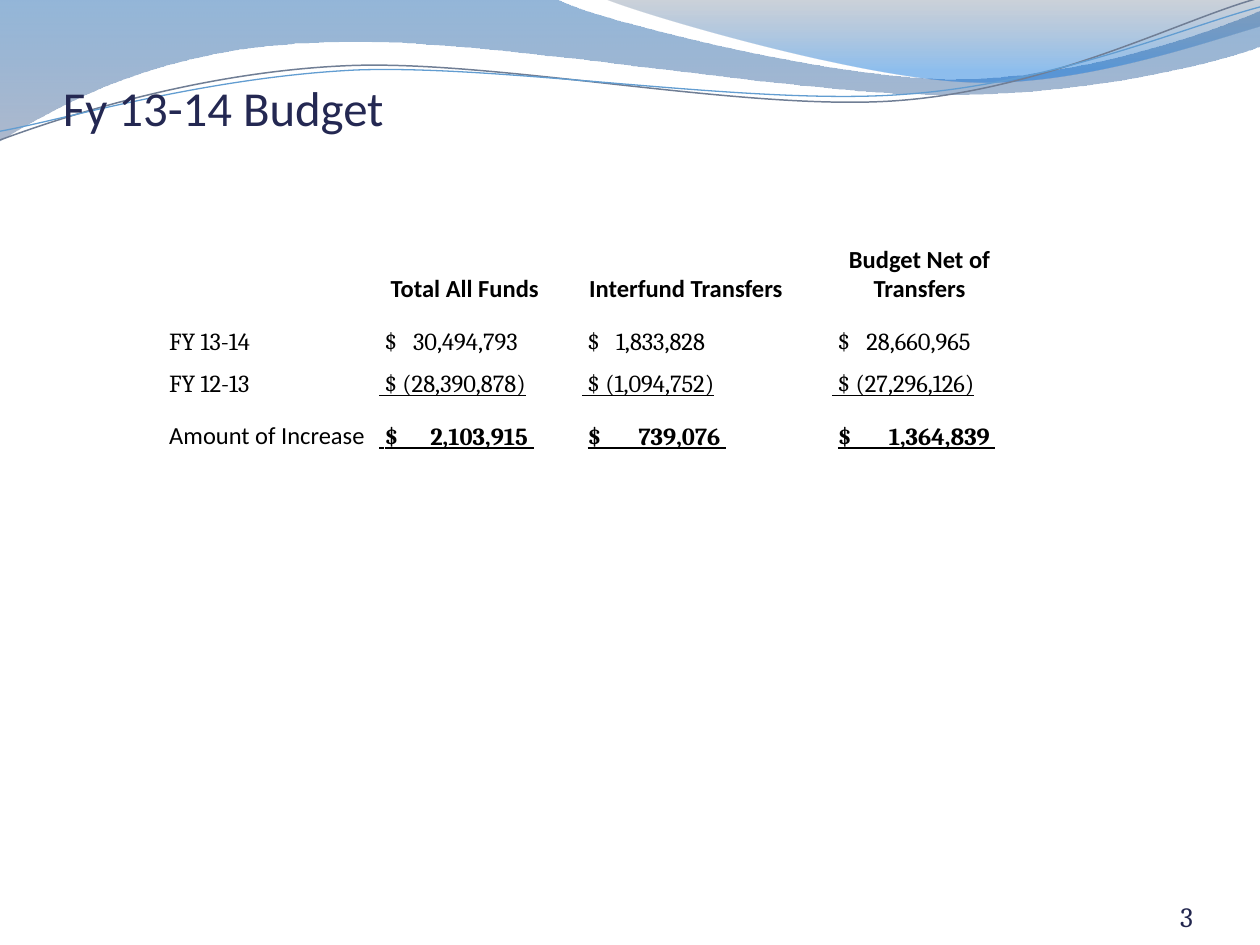
import math
from dataclasses import dataclass

from lxml import etree
from pptx import Presentation
from pptx.dml.color import RGBColor
from pptx.enum import text
from pptx.oxml import ns
from pptx.util import Pt


@dataclass(frozen=True)
class Theme:
    head: str = "Calibri"
    body: str = "Cambria"
    navy: str = "242852"
    dark: str = "22264E"
    ink: str = "000000"
    big: float = 27.9
    mid: int = 16
    small: int = 14
    wave: tuple = ((0, "125EAA", 45), (100, "697FA4", 55))
    crest: tuple = ((0, "596982", 30), (80, "0670DA", 45))
    grey: str = "707E95"
    blue: str = "629DD1"


T = Theme()
LEFT, MID = text.PP_ALIGN.LEFT, text.PP_ALIGN.CENTER
TILT = -2.7

WAVE = [(0, 0), (317, -1), (343, 12, 478, 45, 546, 45),
        (614, 45, 690, 19, 720, 6), (721, 26),
        (708, 32, 626, 55, 537, 54), (448, 54, 275, 20, 185, 24),
        (93, 26, 33, 60, -1, 81), (0, 0)]
CREST = [(345, -1), (366, 8, 491, 45, 554, 47),
         (616, 50, 692, 23, 720, 15), (720, 0), (345, -1)]
UPPER = [(0, 80), (35, 67, 114, 41, 199, 37.5),
         (284, 34, 427, 64, 513, 57.5), (600, 51, 675, 11, 719, -1)]
LOWER = [(0, 75), (34, 69, 118, 44, 204, 40),
         (290, 37, 430, 60.5, 516, 54), (602, 48, 678, 15, 720, 4)]

COLS = (120, 96, 20, 120, 23, 101)
ROWS = (42, 30, 24, 30)
HEADS = (" Total All Funds", "Interfund Transfers", "Budget Net of Transfers")
NAMES = ("FY 13-14", "FY 12-13", "Amount of Increase")
NEW = (" $   30,494,793", " $   1,833,828", " $   28,660,965")
OLD = (" $ (28,390,878)", " $ (1,094,752)", " $ (27,296,126)")
RISE = ("$      2,103,915 ", "$       739,076 ", "$       1,364,839 ")


def rgb(code):
    return RGBColor.from_string(code)


def pairs(part):
    return list(zip(part[::2], part[1::2]))


def turn(route, angle, mid):
    cos, sin = math.cos(math.radians(angle)), math.sin(math.radians(angle))
    x0, y0 = mid

    def spin(x, y):
        x, y = x - x0, y - y0
        return x0 + x * cos - y * sin, y0 + x * sin + y * cos

    return [sum((spin(*p) for p in pairs(part)), ()) for part in route]


def outline(slide, route, close):
    pts = [(Pt(x), Pt(y)) for part in route for x, y in pairs(part)]
    form = slide.shapes.build_freeform(*pts[0])
    form.add_line_segments(pts[1:], close=close)
    shape = form.convert_to_shape()
    shape.shadow.inherit = False
    legs = iter(list(shape.element.iter(ns.qn("a:lnTo"))))
    for part in route[1:]:
        first, *rest = [next(legs) for _ in pairs(part)]
        if rest:
            bend = etree.Element(ns.qn("a:cubicBezTo"))
            first.addprevious(bend)
            for leg in (first, *rest):
                bend.append(leg[0])
                leg.getparent().remove(leg)
    return shape


def band(slide, route, stops):
    shape = outline(slide, route, True)
    shape.line.fill.background()
    shape.fill.gradient()
    shape.fill.gradient_angle = 270
    for stop, (pos, code, _) in zip(shape.fill.gradient_stops, stops):
        stop.position = pos / 100
        stop.color.rgb = rgb(code)
    tints = shape.element.iter(ns.qn("a:srgbClr"))
    for tint, (_, _, alpha) in zip(tints, stops):
        etree.SubElement(tint, ns.qn("a:alpha")).set("val", str(alpha * 1000))


def curve(slide, route, mid, code, width):
    shape = outline(slide, turn(route, -TILT, mid), False)
    shape.rotation = TILT
    shape.fill.background()
    shape.line.color.rgb = rgb(code)
    shape.line.width = Pt(width)


def style(para, face, size, code, align=LEFT):
    para.alignment = align
    font = para.font
    font.name, font.size = face, Pt(size)
    font.color.rgb = rgb(code)


def label(slide, box, words, face, size, code, align=LEFT):
    frame = slide.shapes.add_textbox(*map(Pt, box)).text_frame
    frame.word_wrap = True
    frame.vertical_anchor = text.MSO_ANCHOR.BOTTOM
    frame.margin_left = frame.margin_right = 0
    frame.margin_top = frame.margin_bottom = 0
    para = frame.paragraphs[0]
    para.text = words
    style(para, face, size, code, align)


def write(cell, words, face=T.body, bold=False, line=False, align=LEFT):
    para = cell.text_frame.paragraphs[0]
    para.text = words
    style(para, face, T.small, T.ink, align)
    para.font.bold, para.font.underline = bold, line
    return para


def total(cell, value, line):
    para = write(cell, "")
    for words, bold, under in ((" ", False, line), (value, True, True)):
        run = para.add_run()
        run.text = words
        run.font.bold, run.font.underline = bold, under


def budget(slide):
    table = slide.shapes.add_table(
        len(ROWS), len(COLS), Pt(96), Pt(132), Pt(sum(COLS)), Pt(sum(ROWS))).table
    table.first_row = table.horz_banding = False
    for col, width in zip(table.columns, COLS):
        col.width = Pt(width)
    for row, height in zip(table.rows, ROWS):
        row.height = Pt(height)
    for cell in table.iter_cells():
        cell.fill.background()
        cell.vertical_anchor = text.MSO_ANCHOR.BOTTOM
        cell.margin_left = cell.margin_right = cell.margin_top = Pt(0.7)
        cell.margin_bottom = 0
    for r, name in enumerate(NAMES, 1):
        write(table.cell(r, 0), name, T.head if r == len(NAMES) else T.body)
    for i, (head, new, old, rise) in enumerate(zip(HEADS, NEW, OLD, RISE)):
        c = 2 * i + 1
        write(table.cell(0, c), head, T.head, bold=True, align=MID)
        write(table.cell(1, c), new)
        write(table.cell(2, c), old, line=True)
        total(table.cell(3, c), rise, line=i == 0)


def main():
    deck = Presentation()
    deck.slide_width, deck.slide_height = Pt(720), Pt(540)
    slide = deck.slides.add_slide(deck.slide_layouts[6])
    band(slide, WAVE, T.wave)
    band(slide, CREST, T.crest)
    curve(slide, UPPER, (359.5, 41.5), T.grey, 0.85)
    curve(slide, LOWER, (360, 42.5), T.blue, 0.75)
    label(slide, (36, 36, 648, 42), "Fy 13-14 Budget", T.head, T.big, T.navy)
    budget(slide)
    label(slide, (648, 504, 60, 29), "3", T.body, T.mid, T.dark, MID)
    deck.save("out.pptx")


if __name__ == "__main__":
    main()
